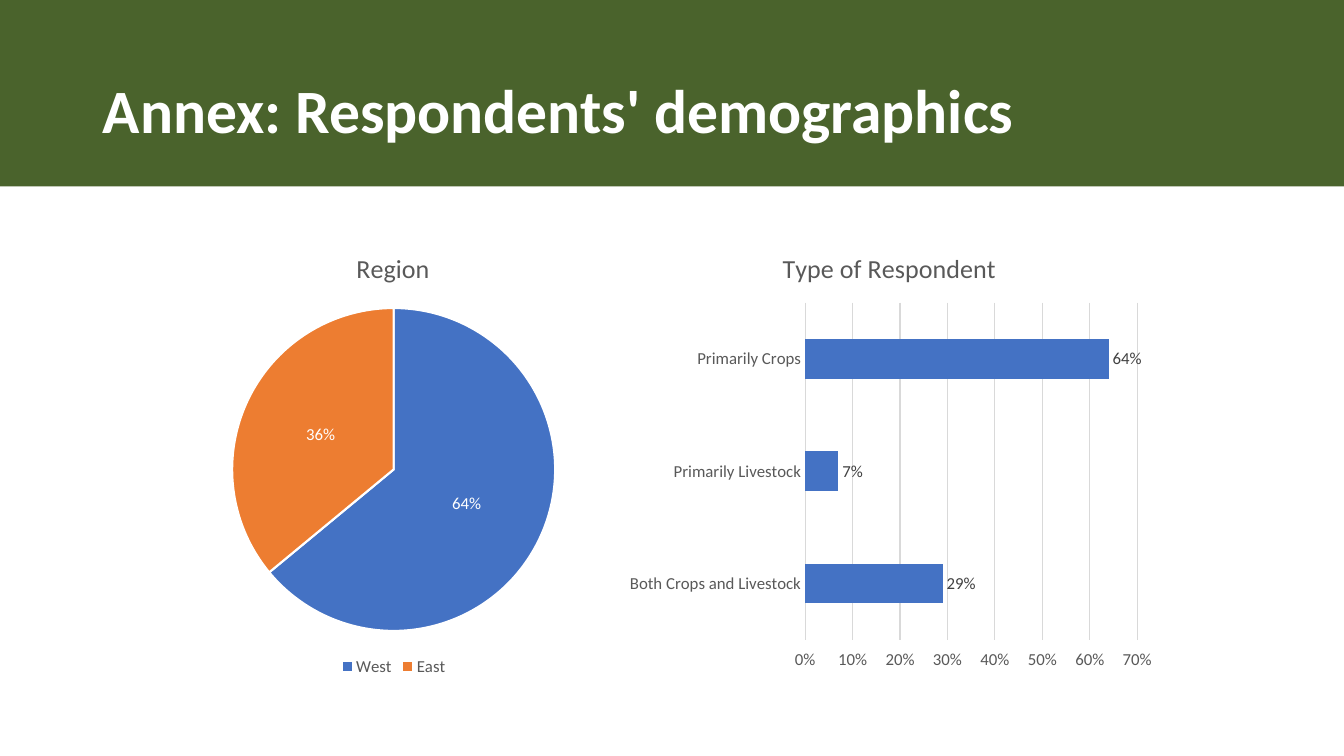
"""Build the annex slide with the respondents' demographics charts."""
from lxml import etree
from pptx import Presentation
from pptx.chart.data import CategoryChartData
from pptx.dml.color import RGBColor
from pptx.enum.chart import (XL_CHART_TYPE, XL_LABEL_POSITION, XL_LEGEND_POSITION,
                             XL_TICK_LABEL_POSITION, XL_TICK_MARK)
from pptx.enum.shapes import MSO_SHAPE
from pptx.enum.text import MSO_ANCHOR, MSO_AUTO_SIZE, PP_ALIGN
from pptx.oxml.ns import qn
from pptx.util import Inches, Pt

PIE, BAR = XL_CHART_TYPE.PIE, XL_CHART_TYPE.BAR_CLUSTERED
CENTER, OUTSIDE_END = XL_LABEL_POSITION.CENTER, XL_LABEL_POSITION.OUTSIDE_END
BOTTOM = XL_LEGEND_POSITION.BOTTOM
NO_TICK = XL_TICK_MARK.NONE
HIGH = XL_TICK_LABEL_POSITION.HIGH
RECTANGLE = MSO_SHAPE.RECTANGLE
MIDDLE = MSO_ANCHOR.MIDDLE
NO_FIT = MSO_AUTO_SIZE.NONE
LEFT = PP_ALIGN.LEFT

THEME = {
    "font": "Calibri",
    "green": RGBColor.from_string("4A632C"),
    "white": RGBColor.from_string("FFFFFF"),
    "blue": RGBColor.from_string("4472C4"),
    "orange": RGBColor.from_string("ED7D31"),
    "text": RGBColor.from_string("595959"),
    "label": RGBColor.from_string("404040"),
    "grid": RGBColor.from_string("D9D9D9"),
    "title": Pt(44),
    "chart_title": Pt(18.6),
    "chart_text": Pt(12),
}


def write(tf, text, size, color, bold=False, spacing=None):
    tf.text = text
    p = tf.paragraphs[0]
    p.line_spacing = spacing
    font = p.runs[0].font
    font.name, font.size, font.bold = THEME["font"], THEME[size], bold
    font.color.rgb = THEME[color]


def place(parent, index, **box):
    for old in parent.findall(qn("c:layout")):
        parent.remove(old)
    layout = etree.Element(qn("c:layout"))
    manual = etree.SubElement(layout, qn("c:manualLayout"))
    if "w" in box:
        etree.SubElement(manual, qn("c:layoutTarget"), val="inner")
    for side in ("x", "y"):
        etree.SubElement(manual, qn(f"c:{side}Mode"), val="edge")
    for side, share in box.items():
        etree.SubElement(manual, qn(f"c:{side}"), val=str(share))
    parent.insert(index, layout)


prs = Presentation()
prs.slide_width, prs.slide_height = Inches(13.33), Inches(7.5)
s = prs.slides.add_slide(prs.slide_layouts[5])

band = s.shapes.add_shape(RECTANGLE, 0, 0, prs.slide_width, Inches(1.85))
band.shadow.inherit = False
band.fill.solid()
band.fill.fore_color.rgb = THEME["green"]
band.line.fill.background()
s.shapes._spTree.insert(2, band._element)

title = s.shapes.title
title.left, title.top = Inches(0.92), Inches(0.4)
title.width, title.height = Inches(11.5), Inches(1.45)
tf = title.text_frame
tf.word_wrap, tf.auto_size, tf.vertical_anchor = True, NO_FIT, MIDDLE
write(tf, "Annex: Respondents' demographics", "title", "white", bold=True, spacing=0.9)
tf.paragraphs[0].alignment = LEFT

charts = {}
for kind, heading, series, shares, frame, head, plot_box, pos, color in (
    (PIE, "Region", "Region", {"West": 0.64, "East": 0.36},
     (0.92, 2.3, 5.97, 4.45), {"x": 0.43, "y": 0.03},
     {"x": 0.23, "y": 0.17, "w": 0.54, "h": 0.72}, CENTER, "white"),
    (BAR, "Type of Respondent", "Series 1",
     {"Primarily Crops": 0.64, "Primarily Livestock": 0.07, "Both Crops and Livestock": 0.29},
     (6.15, 2.3, 5.4, 4.4), {"x": 0.29, "y": 0.03},
     {"x": 0.34, "y": 0.16, "w": 0.61, "h": 0.76}, OUTSIDE_END, "label"),
):
    data = CategoryChartData(number_format="0%")
    data.categories = list(shares)
    data.add_series(series, list(shares.values()))
    chart = s.shapes.add_chart(kind, *map(Inches, frame), data).chart
    chart.font.name, chart.font.size = THEME["font"], THEME["chart_text"]
    chart.font.color.rgb = THEME["text"]
    chart.has_title = True
    write(chart.chart_title.text_frame, heading, "chart_title", "text")
    place(chart.chart_title._element, 1, **head)
    place(chart._chartSpace.chart.plotArea, 0, **plot_box)
    plot = chart.plots[0]
    plot.has_data_labels = True
    labels = plot.data_labels
    labels.show_value, labels.show_percentage = True, False
    labels.number_format, labels.number_format_is_linked = "0%", False
    labels.position = pos
    labels.font.name, labels.font.size = THEME["font"], THEME["chart_text"]
    labels.font.color.rgb = THEME[color]
    charts[kind] = chart

pie = charts[PIE]
pie.plots[0].vary_by_categories = True
pie.has_legend = True
pie.legend.position, pie.legend.include_in_layout = BOTTOM, False
for i, color in enumerate(("blue", "orange")):
    part = pie.plots[0].series[0].points[i].format
    part.fill.solid()
    part.fill.fore_color.rgb = THEME[color]
    part.line.color.rgb = THEME["white"]
    part.line.width = Pt(1.5)

bar = charts[BAR]
bar.has_legend = False
plot = bar.plots[0]
plot.vary_by_categories, plot.gap_width = False, 182
fill = plot.series[0].format.fill
fill.solid()
fill.fore_color.rgb = THEME["blue"]
cat, val = bar.category_axis, bar.value_axis
for axis in (cat, val):
    axis.major_tick_mark = axis.minor_tick_mark = NO_TICK
cat.reverse_order = True
val.tick_label_position = HIGH
val.minimum_scale, val.maximum_scale, val.major_unit = 0, 0.7, 0.1
val.tick_labels.number_format, val.tick_labels.number_format_is_linked = "0%", False
val.has_major_gridlines = True
val.format.line.fill.background()
for line in (cat.format.line, val.major_gridlines.format.line):
    line.color.rgb, line.width = THEME["grid"], Pt(0.75)

prs.save("out.pptx")
